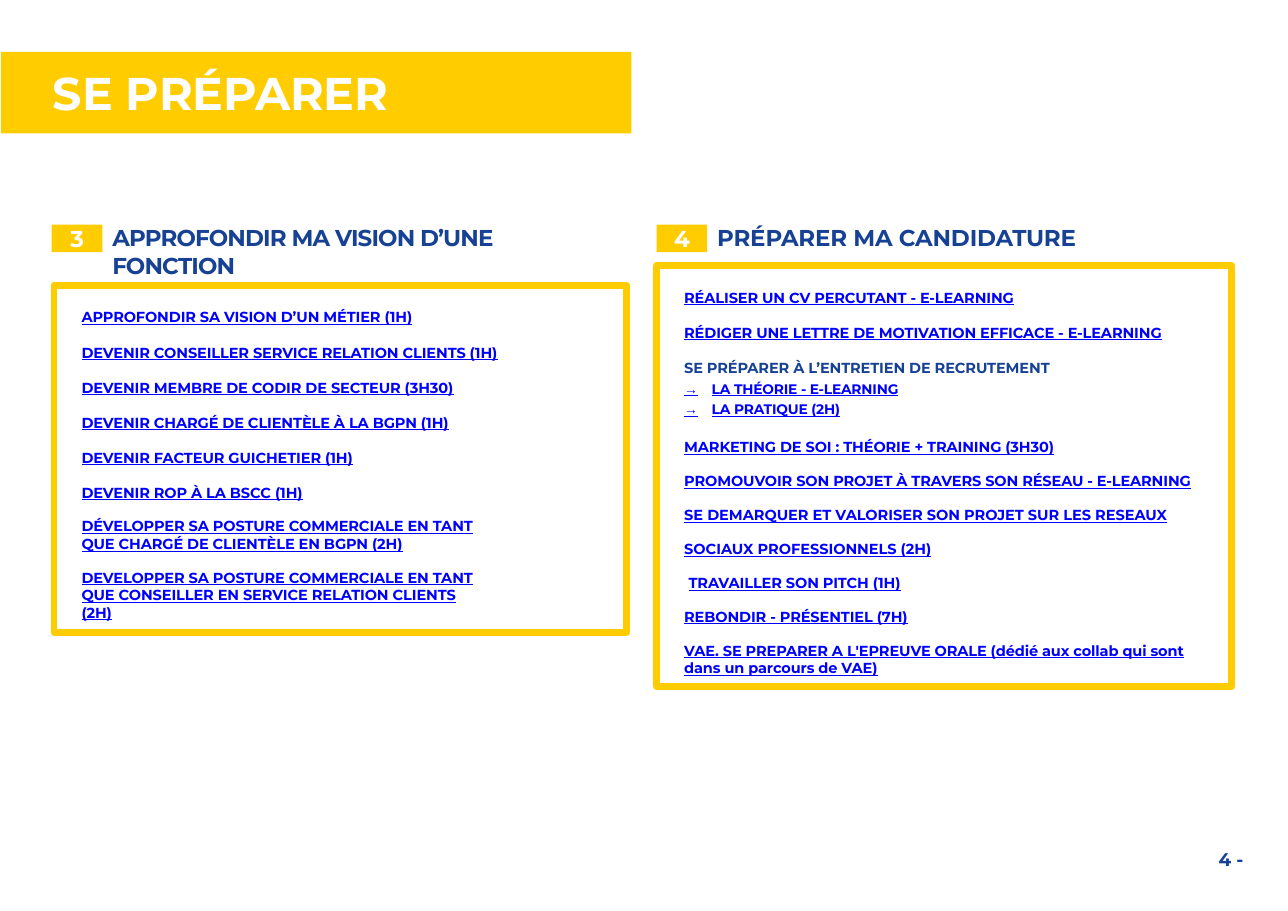
from pptx import Presentation
from pptx.dml.color import RGBColor
from pptx.enum.shapes import MSO_SHAPE as Shape
from pptx.enum.text import MSO_ANCHOR as Anchor, MSO_AUTO_SIZE as AutoSize, PP_ALIGN as Align
from pptx.util import Inches, Pt

YELLOW, NAVY, LINK, WHITE = "FFCC00", "164194", "0000FF", "FFFFFF"
TITLE_ONLY = 5
WIDE, TIGHT = 11.5, 10.7  # points between two entries


def colour(value):
    return RGBColor.from_string(value)


def set_frame(box, left=0, top=0, right=0, anchor=Anchor.TOP):
    """Set the insets and anchor of a shape's text, and return its text frame."""
    frame = box.text_frame
    frame.word_wrap = True
    frame.auto_size = AutoSize.NONE
    frame.vertical_anchor = anchor
    frame.margin_left, frame.margin_top = Inches(left), Inches(top)
    frame.margin_right, frame.margin_bottom = Inches(right), 0
    return frame


def add_text(para, text, size=9.5, color=LINK, bold=True, underline=False,
             font="Montserrat", spacing=0):
    span = para.add_run()
    span.text = text
    style = span.font
    style.name, style.size = font, Pt(size)
    style.bold, style.underline = bold, underline
    style.color.rgb = colour(color)
    if spacing:
        span._r.get_or_add_rPr().set("spc", str(round(spacing * 100)))


def set_indent(para, left=0.25, hanging=0, right=0):
    properties = para._p.get_or_add_pPr()
    properties.set("marL", str(Inches(left)))
    properties.set("marR", str(Inches(right)))
    properties.set("indent", str(-Inches(hanging)))


class TrainingSlide:
    def __init__(self, deck):
        self.page = deck.slides.add_slide(deck.slide_layouts[TITLE_ONLY])

    def title(self, text):
        box = self.page.shapes.title
        box.left, box.top = Inches(0.01), Inches(0.47)
        box.width, box.height = Inches(5.72), Inches(0.74)
        box.fill.solid()
        box.fill.fore_color.rgb = colour(YELLOW)
        para = set_frame(box, left=0.47, top=0.12).paragraphs[0]
        para.alignment = Align.LEFT
        add_text(para, text, size=30, color=WHITE)

    def rectangle(self, left, top, width, height):
        box = self.page.shapes.add_shape(
            Shape.RECTANGLE, Inches(left), Inches(top), Inches(width), Inches(height))
        box.shadow.inherit = False
        return box

    def label(self, text, left, top, width, height, inset=(0, 0), **style):
        box = self.page.shapes.add_textbox(
            Inches(left), Inches(top), Inches(width), Inches(height))
        para = set_frame(box, *inset).paragraphs[0]
        add_text(para, text, color=NAVY, **style)

    def heading(self, number, text, left, width, spacing):
        badge = self.rectangle(left, 2.04, 0.46, 0.25)
        badge.fill.solid()
        badge.fill.fore_color.rgb = colour(YELLOW)
        badge.line.fill.background()
        para = set_frame(badge, anchor=Anchor.MIDDLE).paragraphs[0]
        para.alignment = Align.CENTER
        add_text(para, number, size=15, color=WHITE)
        self.label(text, left + 0.54, 2.02, width, 0.28, inset=(0.01, 0.01),
                   size=15, spacing=spacing)

    def course_frame(self, left, top, width, height, courses):
        box = self.rectangle(left, top, width, height)
        box.fill.background()
        box.line.color.rgb = colour(YELLOW)
        box.line.width = Pt(4.46)
        frame = set_frame(box, top=0.21, right=0.2)
        for index, (kind, gap, text) in enumerate(courses):
            para = frame.add_paragraph() if index else frame.paragraphs[0]
            para.alignment = Align.LEFT
            para.space_before = Pt(gap)
            self.course(para, kind, text)

    def course(self, para, kind, text):
        if kind == "step":
            set_indent(para, left=0.5, hanging=0.25)
            add_text(para, "→\t", size=9, bold=False, underline=True, font="Arial")
            add_text(para, text, size=9, underline=True, spacing=-0.1)
        elif kind == "topic":
            set_indent(para)
            add_text(para, text, color=NAVY, spacing=-0.05)
        else:
            set_indent(para, left=0.29 if kind == "shifted" else 0.25,
                       right=1.09 if kind == "narrow" else 0)
            if kind == "open":
                para.line_spacing = 1.96
            add_text(para, text, underline=True,
                     spacing=0 if kind == "open" else -0.05)


DISCOVERY = [
    ("link", 0, "APPROFONDIR SA VISION D’UN MÉTIER (1H)"),
    ("link", WIDE, "DEVENIR CONSEILLER SERVICE RELATION CLIENTS (1H)"),
    ("link", WIDE, "DEVENIR MEMBRE DE CODIR DE SECTEUR (3H30)"),
    ("link", WIDE, "DEVENIR CHARGÉ DE CLIENTÈLE À LA BGPN (1H)"),
    ("link", WIDE, "DEVENIR FACTEUR GUICHETIER (1H)"),
    ("link", WIDE, "DEVENIR ROP À LA BSCC (1H)"),
    ("narrow", TIGHT, "DÉVELOPPER SA POSTURE COMMERCIALE EN TANT QUE CHARGÉ DE CLIENTÈLE EN BGPN (2H)"),
    ("narrow", TIGHT, "DEVELOPPER SA POSTURE COMMERCIALE EN TANT QUE CONSEILLER EN SERVICE "
                      "RELATION CLIENTS (2H)"),
]
APPLICATION = [
    ("link", 0, "RÉALISER UN CV PERCUTANT - E-LEARNING"),
    ("link", WIDE, "RÉDIGER UNE LETTRE DE MOTIVATION EFFICACE - E-LEARNING"),
    ("topic", WIDE, "SE PRÉPARER À L’ENTRETIEN DE RECRUTEMENT"),
    ("step", 2.7, "LA THÉORIE - E-LEARNING"),
    ("step", 2.7, "LA PRATIQUE (2H)"),
    ("link", 13.5, "MARKETING DE SOI : THÉORIE + TRAINING (3H30)"),
    ("link", TIGHT, "PROMOUVOIR SON PROJET À TRAVERS SON RÉSEAU - E-LEARNING"),
    ("open", 0, "SE DEMARQUER ET VALORISER SON PROJET SUR LES RESEAUX SOCIAUX PROFESSIONNELS (2H)"),
    ("shifted", TIGHT, "TRAVAILLER SON PITCH (1H)"),
    ("link", TIGHT, "REBONDIR - PRÉSENTIEL (7H)"),
    ("link", TIGHT, "VAE. SE PREPARER A L'EPREUVE ORALE (dédié aux collab qui sont "
                    "dans un parcours de VAE)"),
]


def main():
    deck = Presentation()
    deck.slide_width, deck.slide_height = Inches(11.69), Inches(8.27)
    slide = TrainingSlide(deck)
    slide.title("SE PRÉPARER")
    slide.course_frame(0.49, 2.59, 5.2, 3.15, DISCOVERY)
    slide.course_frame(5.96, 2.41, 5.22, 3.82, APPLICATION)
    slide.heading("3", "APPROFONDIR MA VISION D’UNE FONCTION", 0.47, 4.5, spacing=-0.55)
    slide.heading("4", "PRÉPARER MA CANDIDATURE", 5.96, 4.5, spacing=-0.1)
    slide.label("4 -", 11.02, 7.67, 0.4, 0.25, inset=(0.04, 0.03), size=12)
    deck.save("out.pptx")


if __name__ == "__main__":
    main()
